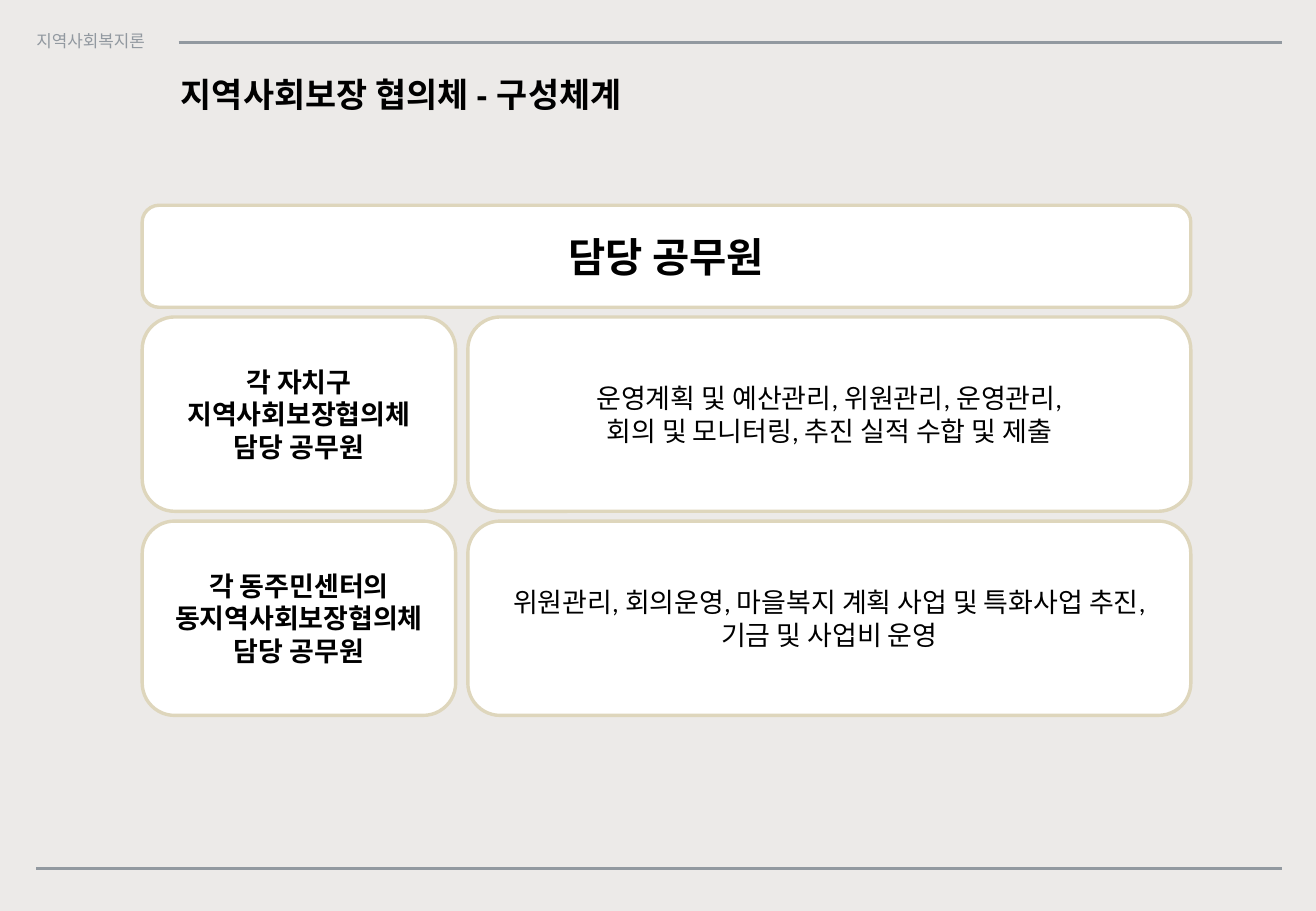
from pptx import Presentation
from pptx.dml.color import RGBColor
from pptx.enum.shapes import MSO_CONNECTOR, MSO_SHAPE
from pptx.enum.text import MSO_ANCHOR, PP_ALIGN
from pptx.oxml.ns import qn
from pptx.util import Inches, Pt

COLORS = {
    "background": "ECEAE8",
    "rule": "9299A0",
    "box": "FFFFFF",
    "border": "DED6BC",
    "text": "000000",
}
LEFT, RIGHT = 1.17, 9.8
ROLE_W, ROW_H = 2.58, 1.6
DUTY_X = 3.85
ROWS_TOP, ROW_STEP = 2.61, 1.68

ROWS = [
    (["각 자치구 지역사회보장협의체", "담당 공무원"],
     ["운영계획 및 예산관리, 위원관리, 운영관리,",
      "회의 및 모니터링, 추진 실적 수합 및 제출"]),
    (["각 동주민센터의", "동지역사회보장협의체", "담당 공무원"],
     ["위원관리, 회의운영, 마을복지 계획 사업 및 특화사업 추진, 기금 및 사업비 운영"]),
]


def rgb(name):
    return RGBColor.from_string(COLORS[name])


def write(s, lines, size, bold=False, color="text", font="Calibri",
          align=PP_ALIGN.CENTER, anchor=MSO_ANCHOR.MIDDLE):
    tf = s.text_frame
    tf.word_wrap = True
    tf.vertical_anchor = anchor
    tf.text = "\n".join(lines)
    for p in tf.paragraphs:
        p.alignment = align
        for r in p.runs:
            r.font.name = font
            r.font.size = Pt(size)
            r.font.bold = bold
            r.font.color.rgb = rgb(color)


def add_rule(slide, x1, x2, y):
    """Draw a horizontal grey line."""
    line = slide.shapes.add_connector(
        MSO_CONNECTOR.STRAIGHT, Inches(x1), Inches(y), Inches(x2), Inches(y))
    line.line.color.rgb = rgb("rule")
    line.line.width = Pt(2)
    sp_pr = line._element.spPr
    sp_pr.append(sp_pr.makeelement(qn("a:effectLst"), {}))


def add_box(slide, x, y, w, h, lines, size, bold=False):
    s = slide.shapes.add_shape(MSO_SHAPE.FLOWCHART_ALTERNATE_PROCESS,
                               Inches(x), Inches(y), Inches(w), Inches(h))
    s.shadow.inherit = False
    s.fill.solid()
    s.fill.fore_color.rgb = rgb("box")
    s.line.color.rgb = rgb("border")
    s.line.width = Pt(2)
    write(s, lines, size, bold)


def add_course_label(slide, text):
    s = slide.shapes.add_shape(MSO_SHAPE.RECTANGLE, Inches(0.12), Inches(0.2),
                               Inches(1.25), Inches(0.27))
    s.shadow.inherit = False
    s.fill.solid()
    s.fill.fore_color.rgb = rgb("background")
    s.line.fill.background()
    write(s, [text], 10, color="rule", anchor=MSO_ANCHOR.TOP)


def add_title(slide, text):
    s = slide.shapes.add_textbox(Inches(1.39), Inches(0.56),
                                 Inches(4.61), Inches(0.44))
    write(s, [text], 20, bold=True, font="Arial",
          align=PP_ALIGN.LEFT, anchor=MSO_ANCHOR.TOP)


def main():
    prs = Presentation()
    prs.slide_width, prs.slide_height = Inches(10.83), Inches(7.5)
    slide = prs.slides.add_slide(prs.slide_layouts[6])
    slide.background.fill.solid()
    slide.background.fill.fore_color.rgb = rgb("background")

    add_rule(slide, 0.3, 10.55, 7.15)
    add_rule(slide, 1.47, 10.55, 0.35)
    add_course_label(slide, "지역사회복지론")
    add_title(slide, "지역사회보장 협의체 - 구성체계")

    add_box(slide, LEFT, 1.69, RIGHT - LEFT, 0.84, ["담당 공무원"], 24, bold=True)
    for i, (role, duties) in enumerate(ROWS):
        y = ROWS_TOP + i * ROW_STEP
        add_box(slide, LEFT, y, ROLE_W, ROW_H, role, 16, bold=True)
        add_box(slide, DUTY_X, y, RIGHT - DUTY_X, ROW_H, duties, 16)

    prs.save("out.pptx")


if __name__ == "__main__":
    main()
